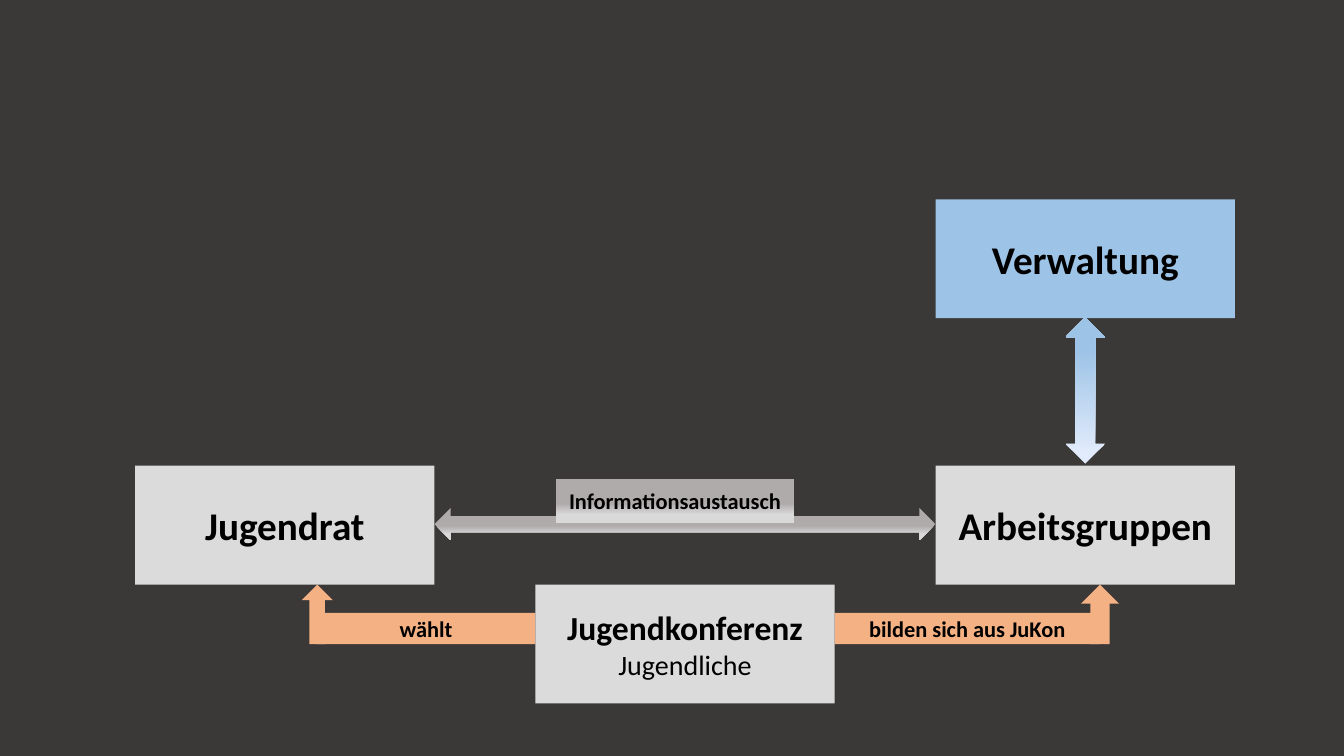
from dataclasses import dataclass
from pptx import Presentation
from pptx.dml.color import RGBColor
from pptx.enum import shapes, text
from pptx import util as u

KIND = shapes.MSO_SHAPE
WIDE, HIGH = 13.33, 7.5


@dataclass(frozen=True)
class Theme:
    font: str = "Calibri"
    ink: str = "000000"
    back: str = "3B3838"
    box: str = "DBDBDB"
    blue: str = "9DC3E6"
    flow: str = "F4B183"
    gray: tuple = ((56, "AFABAB"), (81, "D9D9D9"))
    sky: tuple = ((7, "E1EBFB"), (78, "9DC3E6"))
    head: int = 28
    mid: int = 24
    sub: int = 20
    note: int = 16


THEME = Theme()
BOX_W, BOX_H = 22.28, 15.73


def col(index):
    return 10.05 + 29.78 * index


def row(index):
    return 61.6 + BOX_H * index


def paint(fill, tone, angle):
    if isinstance(tone, str):
        fill.solid()
        fill.fore_color.rgb = RGBColor.from_string(tone)
        return
    fill.gradient()
    fill.gradient_angle = angle
    for stop, (place, shade) in zip(fill.gradient_stops, tone):
        stop.position = place / 100
        stop.color.rgb = RGBColor.from_string(shade)


def draw(slide, kind, area, tone, angle=270):
    left, top, width, height = area
    shape = slide.shapes.add_shape(
        kind,
        u.Inches(left * WIDE / 100), u.Inches(top * HIGH / 100),
        u.Inches(width * WIDE / 100), u.Inches(height * HIGH / 100))
    shape.shadow.inherit = False
    shape.line.fill.background()
    paint(shape.fill, tone, angle)
    return shape


def label(shape, *lines):
    frame = shape.text_frame
    frame.word_wrap = True
    frame.vertical_anchor = text.MSO_ANCHOR.MIDDLE
    frame.text = "\n".join(words for words, size, bold in lines)
    for para, (words, size, bold) in zip(frame.paragraphs, lines):
        para.alignment = text.PP_ALIGN.CENTER
        para.font.name = THEME.font
        para.font.size = u.Pt(size)
        para.font.bold = bold
        para.font.color.rgb = RGBColor.from_string(THEME.ink)


def box(slide, across, down, tone, *lines):
    area = (col(across), row(down), BOX_W, BOX_H)
    label(draw(slide, KIND.RECTANGLE, area, tone), *lines)


def flow(slide, left, right, tip, width, words):
    bar = draw(slide, KIND.RECTANGLE,
               (left, 81.07, right - left, 4.13), THEME.flow)
    label(bar, (words, THEME.note, True))
    draw(slide, KIND.UP_ARROW,
         (tip - width / 2, row(1), width, 7.87), THEME.flow)


def main():
    deck = Presentation()
    deck.slide_width, deck.slide_height = u.Inches(WIDE), u.Inches(HIGH)
    slide = deck.slides.add_slide(deck.slide_layouts[6])
    paint(slide.background.fill, THEME.back, 0)

    flow(slide, 23.56, col(1), 23.6, 2.33, "wählt")
    flow(slide, col(1) + BOX_W, 81.85, 81.85, 2.85, "bilden sich aus JuKon")

    box(slide, 1, 1, THEME.box, ("Jugendkonferenz", THEME.mid, True),
        ("Jugendliche", THEME.sub, False))
    box(slide, 0, 0, THEME.box, ("Jugendrat", THEME.head, True))
    box(slide, 2, 0, THEME.box, ("Arbeitsgruppen", THEME.head, True))

    start = col(0) + BOX_W
    draw(slide, KIND.LEFT_RIGHT_ARROW,
         (start, 67.2, col(2) - start, 4.27), THEME.gray)
    note = draw(slide, KIND.RECTANGLE,
                (41.34, 63.33, 17.78, 5.87), THEME.gray)
    label(note, ("Informationsaustausch", THEME.note, True))

    box(slide, 2, -2.24, THEME.blue, ("Verwaltung", THEME.head, True))
    draw(slide, KIND.UP_DOWN_ARROW,
         (col(2) + BOX_W / 2 - 1.46, 42, 2.92, 19.33), THEME.sky, 90)

    deck.save("out.pptx")


if __name__ == "__main__":
    main()
